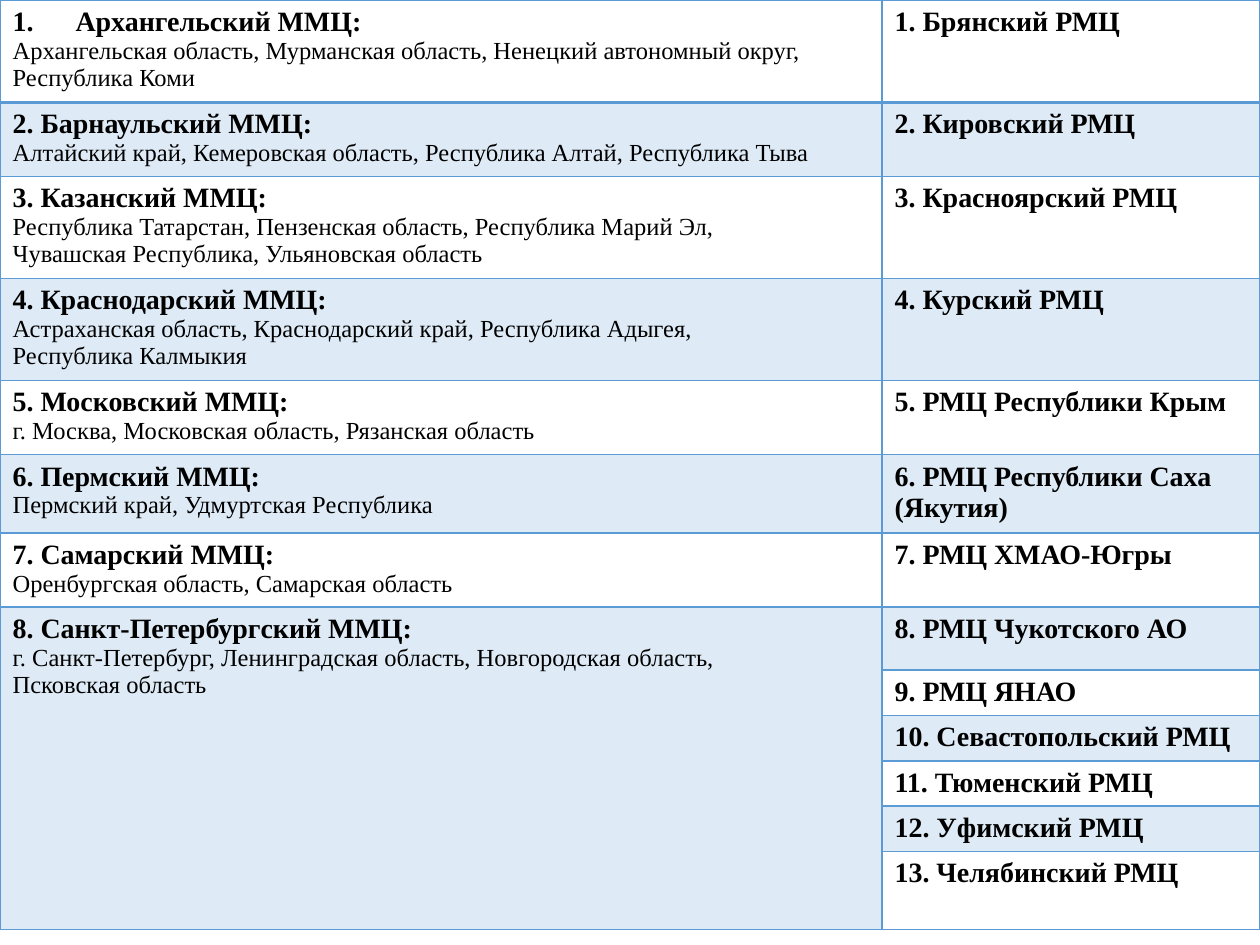
from lxml.etree import SubElement
from pptx import Presentation
from pptx.dml.color import RGBColor
from pptx.oxml import parse_xml
from pptx.oxml.ns import nsdecls, qn
from pptx.util import Inches, Pt

BLUE, BLACK = "5B9BD5", "000000"
THIN, THICK = 0.96, 1.98
COL_WIDTHS = [7, 3]
ROW_HEIGHTS = [0.81, 0.59, 0.81, 0.81, 0.59, 0.62, 0.59, 0.5] + [0.36] * 4 + [0.62]

# Interregional centres: name and regions served
INTERREGIONAL = [
    ("Архангельский", "Архангельская область, Мурманская область, "
     "Ненецкий автономный округ, Республика Коми"),
    ("Барнаульский", "Алтайский край, Кемеровская область, Республика Алтай, Республика Тыва"),
    ("Казанский", "Республика Татарстан, Пензенская область, Республика Марий Эл,\n"
     "Чувашская Республика, Ульяновская область"),
    ("Краснодарский", "Астраханская область, Краснодарский край, Республика Адыгея,\n"
     "Республика Калмыкия"),
    ("Московский", "г. Москва, Московская область, Рязанская область"),
    ("Пермский", "Пермский край, Удмуртская Республика"),
    ("Самарский", "Оренбургская область, Самарская область"),
    ("Санкт-Петербургский", "г. Санкт-Петербург, Ленинградская область, "
     "Новгородская область,\nПсковская область"),
]
REGIONAL = [
    "Брянский РМЦ", "Кировский РМЦ", "Красноярский РМЦ", "Курский РМЦ",
    "РМЦ Республики Крым", "РМЦ Республики Саха (Якутия)", "РМЦ ХМАО-Югры",
    "РМЦ Чукотского АО", "РМЦ ЯНАО", "Севастопольский РМЦ", "Тюменский РМЦ",
    "Уфимский РМЦ", "Челябинский РМЦ",
]


def color(value):
    return RGBColor.from_string(value)


def write(p, text, size, bold):
    p.text = text
    p.font.name = "Times New Roman"
    p.font.size = Pt(size)
    p.font.bold = bold
    p.font.color.rgb = color(BLACK)


def number_paragraph(p):
    """Give the paragraph an automatic number with a hanging indent."""
    pPr = p._p.get_or_add_pPr()
    pPr.set("marL", str(Inches(0.5)))
    pPr.set("indent", str(-Inches(0.5)))
    pPr.insert(0, parse_xml(
        f'<a:buClr {nsdecls("a")}><a:srgbClr val="{BLACK}"/></a:buClr>'))
    pPr.insert(1, parse_xml(
        f'<a:buAutoNum {nsdecls("a")} type="arabicPeriod"/>'))


def style_cell(cell, row):
    """Shade every second row and draw all four borders."""
    if row % 2:
        cell.fill.solid()
        cell.fill.fore_color.rgb = color(BLUE)
        clr = cell._tc.tcPr.find(".//" + qn("a:srgbClr"))
        SubElement(clr, qn("a:alpha"), val="20000")
    else:
        cell.fill.background()
    widths = {"L": THIN, "R": THIN,
              "T": THICK if row == 1 else THIN,
              "B": THICK if row == 0 else THIN}
    for i, (side, width) in enumerate(widths.items()):
        cell._tc.tcPr.insert(i, parse_xml(
            f'<a:ln{side} {nsdecls("a")} w="{Pt(width)}"><a:solidFill>'
            f'<a:srgbClr val="{BLUE}"/></a:solidFill></a:ln{side}>'))


def add_centres_table(slide, left, top, width, height):
    rows = len(REGIONAL)
    table = slide.shapes.add_table(rows, 2, left, top, width, height).table
    table.first_row = table.horz_banding = False
    for col, w in zip(table.columns, COL_WIDTHS):
        col.width = Inches(w)
    for row, h in zip(table.rows, ROW_HEIGHTS):
        row.height = Inches(h)

    # The last interregional centre spans the remaining rows
    last = len(INTERREGIONAL) - 1
    table.cell(last, 0).merge(table.cell(rows - 1, 0))
    for i in range(rows):
        style_cell(table.cell(i, 0), min(i, last))
        style_cell(table.cell(i, 1), i)

    # Left column: heading and regions
    for i, (name, regions) in enumerate(INTERREGIONAL):
        tf = table.cell(i, 0).text_frame
        p = tf.paragraphs[0]
        prefix = f"{i + 1}. " if i else ""
        write(p, f"{prefix}{name} ММЦ:", 16, True)
        if i == 0:
            number_paragraph(p)
        write(tf.add_paragraph(), regions, 14, False)

    # Right column: regional centres
    for i, name in enumerate(REGIONAL):
        p = table.cell(i, 1).text_frame.paragraphs[0]
        write(p, f"{i + 1}. {name}", 16, True)


def main():
    prs = Presentation()
    prs.slide_width, prs.slide_height = Inches(10), Inches(7.5)
    slide = prs.slides.add_slide(prs.slide_layouts[6])
    add_centres_table(slide, Inches(0), Inches(0), Inches(10), Inches(7.36))
    prs.save("out.pptx")


if __name__ == "__main__":
    main()
